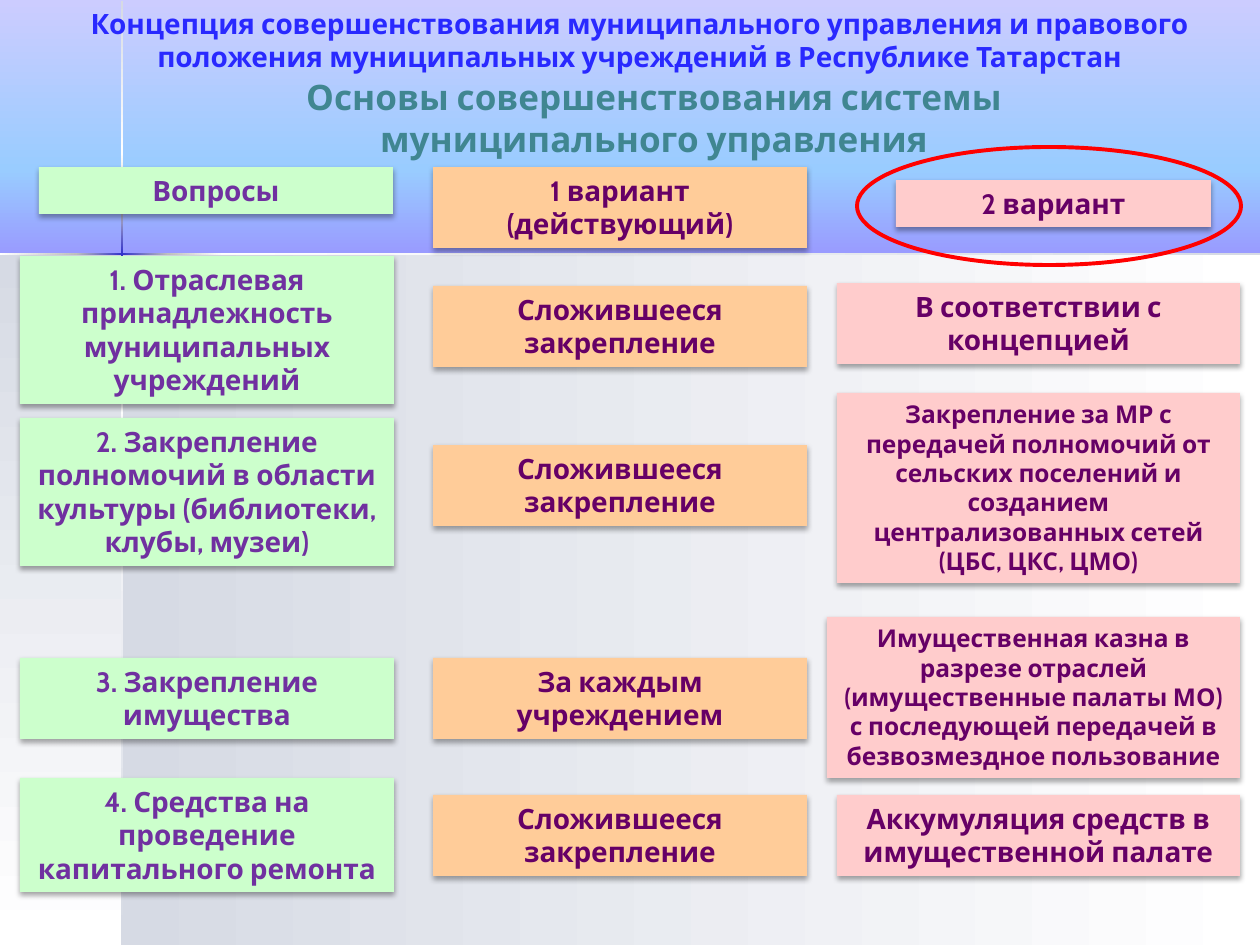
from dataclasses import dataclass

from lxml import etree
from pptx import Presentation
from pptx import util as u
from pptx.dml.color import RGBColor
from pptx.enum import shapes, text
from pptx.oxml.ns import qn


@dataclass(frozen=True)
class Theme:
    font: str = "Cabin"
    title: str = "2929FF"
    subtitle: str = "408691"
    question: str = "7030A0"
    answer: str = "660066"
    green: str = "CCFFCC"
    orange: str = "FFCC99"
    pink: str = "FFCCCC"
    highlight: str = "FF0000"
    mist: str = "D6DAE4"
    white: str = "FFFFFF"
    silver: str = "C0C0C0"
    blue: str = "3333CC"
    sky: tuple = ((0, "CCCCFF"), (18, "99CCFF"), (36, "9966FF"),
                  (61, "CC99FF"), (82, "99CCFF"), (100, "CCCCFF"))
    large: int = 20
    normal: int = 16
    small: int = 14


THEME = Theme()
WIDTH, HEIGHT = 1260, 945
SCALE = u.Inches(10) / WIDTH
DOWN, ACROSS = 270, 0


def px(length):
    return u.Emu(round(length * SCALE))


def place(shape, box):
    shape.left, shape.top, shape.width, shape.height = map(px, box)


def set_gradient(fill, properties, stops, angle):
    fill.gradient()
    fill.gradient_angle = angle
    stop_list = properties.find(qn("a:gradFill")).find(qn("a:gsLst"))
    for stop in list(stop_list):
        stop_list.remove(stop)
    for position, color in stops:
        stop = etree.SubElement(stop_list, qn("a:gs"), pos=str(position * 1000))
        etree.SubElement(stop, qn("a:srgbClr"), val=color)


def add_shadow(shape):
    shape.shadow.inherit = False
    effects = shape._element.spPr.find(qn("a:effectLst"))
    shadow = etree.SubElement(
        effects, qn("a:outerShdw"), blurRad=str(u.Pt(3.1)),
        dist=str(u.Pt(1.8)), dir="5400000", rotWithShape="0")
    color = etree.SubElement(shadow, qn("a:srgbClr"), val="000000")
    etree.SubElement(color, qn("a:alpha"), val="35000")


def write(shape, words, size, color):
    frame = shape.text_frame
    frame.word_wrap = True
    frame.auto_size = text.MSO_AUTO_SIZE.SHAPE_TO_FIT_TEXT
    frame.vertical_anchor = text.MSO_ANCHOR.TOP
    paragraph = frame.paragraphs[0]
    paragraph.alignment = text.PP_ALIGN.CENTER
    run = paragraph.add_run()
    run.text = words
    run.font.name = THEME.font
    run.font.size = u.Pt(size)
    run.font.bold = True
    run.font.color.rgb = RGBColor.from_string(color)


def add_panel(slide, box, colors, angle):
    panel = slide.shapes.add_shape(shapes.MSO_SHAPE.RECTANGLE, *map(px, box))
    panel.shadow.inherit = False
    panel.line.fill.background()
    step = 100 // (len(colors) - 1)
    stops = [(index * step, color) for index, color in enumerate(colors)]
    set_gradient(panel.fill, panel._element.spPr, stops, angle)


def add_backdrop(slide):
    background = slide.background
    background.fill.solid()
    set_gradient(background.fill, slide._element.cSld.bg.bgPr, THEME.sky, DOWN)
    fade = (THEME.mist, THEME.white)
    rise = (THEME.white, THEME.mist)
    glow = (THEME.silver, THEME.blue, THEME.silver)
    column, horizon = 122, 254
    add_panel(slide, (column, horizon, WIDTH - column, HEIGHT - horizon), fade, ACROSS)
    add_panel(slide, (0, horizon, column, HEIGHT - horizon), fade, DOWN)
    for top, bottom, colors in (
            (1, 153, fade), (355, HEIGHT, rise),
            (153, 208, (THEME.white, THEME.silver)), (208, 300, glow)):
        add_panel(slide, (column - 1, top, 2, bottom - top), colors, DOWN)
    for left, right, colors in (
            (223, WIDTH, rise), (0, 76, (THEME.white, THEME.silver)),
            (168, 223, (THEME.silver, THEME.white)), (76, 168, glow)):
        add_panel(slide, (left, horizon - 1, right - left, 2), colors, ACROSS)


def add_card(slide, box, words, fill, color, size=THEME.normal):
    card = slide.shapes.add_shape(shapes.MSO_SHAPE.RECTANGLE, *map(px, box))
    card.fill.solid()
    card.fill.fore_color.rgb = RGBColor.from_string(fill)
    card.line.fill.background()
    add_shadow(card)
    write(card, words, size, color)


def add_headings(slide):
    title = slide.shapes.title
    place(title, (49, 0, 1182, 81))
    write(title, "Концепция совершенствования муниципального управления и правового "
          "положения муниципальных учреждений в Республике Татарстан",
          THEME.normal, THEME.title)
    subtitle = slide.shapes.add_textbox(*map(px, (157, 69, 994, 97)))
    write(subtitle, "Основы совершенствования системы муниципального управления",
          THEME.large, THEME.subtitle)


def add_questions(slide):
    add_card(slide, (39, 167, 354, 47), "Вопросы", THEME.green, THEME.question)
    for top, height, words in (
            (256, 148, "1. Отраслевая принадлежность муниципальных учреждений"),
            (418, 148, "2. Закрепление полномочий в области культуры "
                       "(библиотеки, клубы, музеи)"),
            (658, 81, "3. Закрепление имущества"),
            (778, 114, "4. Средства на проведение капитального ремонта")):
        add_card(slide, (20, top, 374, height), words, THEME.green, THEME.question)


def add_current_option(slide):
    settled = "Сложившееся закрепление"
    for top, words in ((167, "1 вариант (действующий)"), (286, settled), (445, settled),
                       (658, "За каждым учреждением"), (795, settled)):
        add_card(slide, (433, top, 374, 81), words, THEME.orange, THEME.answer)


def add_new_option(slide):
    for box, words, size in (
            ((896, 180, 315, 47), "2 вариант", THEME.normal),
            ((837, 283, 403, 81), "В соответствии с концепцией", THEME.normal),
            ((837, 393, 403, 190),
             "Закрепление за МР с передачей полномочий от сельских поселений и "
             "созданием централизованных сетей (ЦБС, ЦКС, ЦМО)", THEME.small),
            ((827, 617, 413, 161),
             "Имущественная казна в разрезе отраслей (имущественные палаты МО) с "
             "последующей передачей в безвозмездное пользование", THEME.small),
            ((837, 795, 403, 81), "Аккумуляция средств в имущественной палате",
             THEME.normal)):
        add_card(slide, box, words, THEME.pink, THEME.answer, size)


def add_highlight(slide):
    ring = slide.shapes.add_shape(shapes.MSO_SHAPE.OVAL, *map(px, (857, 147, 384, 118)))
    ring.shadow.inherit = False
    ring.fill.background()
    ring.line.color.rgb = RGBColor.from_string(THEME.highlight)
    ring.line.width = u.Pt(2.25)


def main():
    presentation = Presentation()
    presentation.slide_width, presentation.slide_height = px(WIDTH), px(HEIGHT)
    slide = presentation.slides.add_slide(presentation.slide_layouts[5])
    add_backdrop(slide)
    add_headings(slide)
    add_questions(slide)
    add_current_option(slide)
    add_new_option(slide)
    add_highlight(slide)
    title = slide.shapes.title._element
    title.getparent().append(title)
    presentation.save("out.pptx")


if __name__ == "__main__":
    main()
